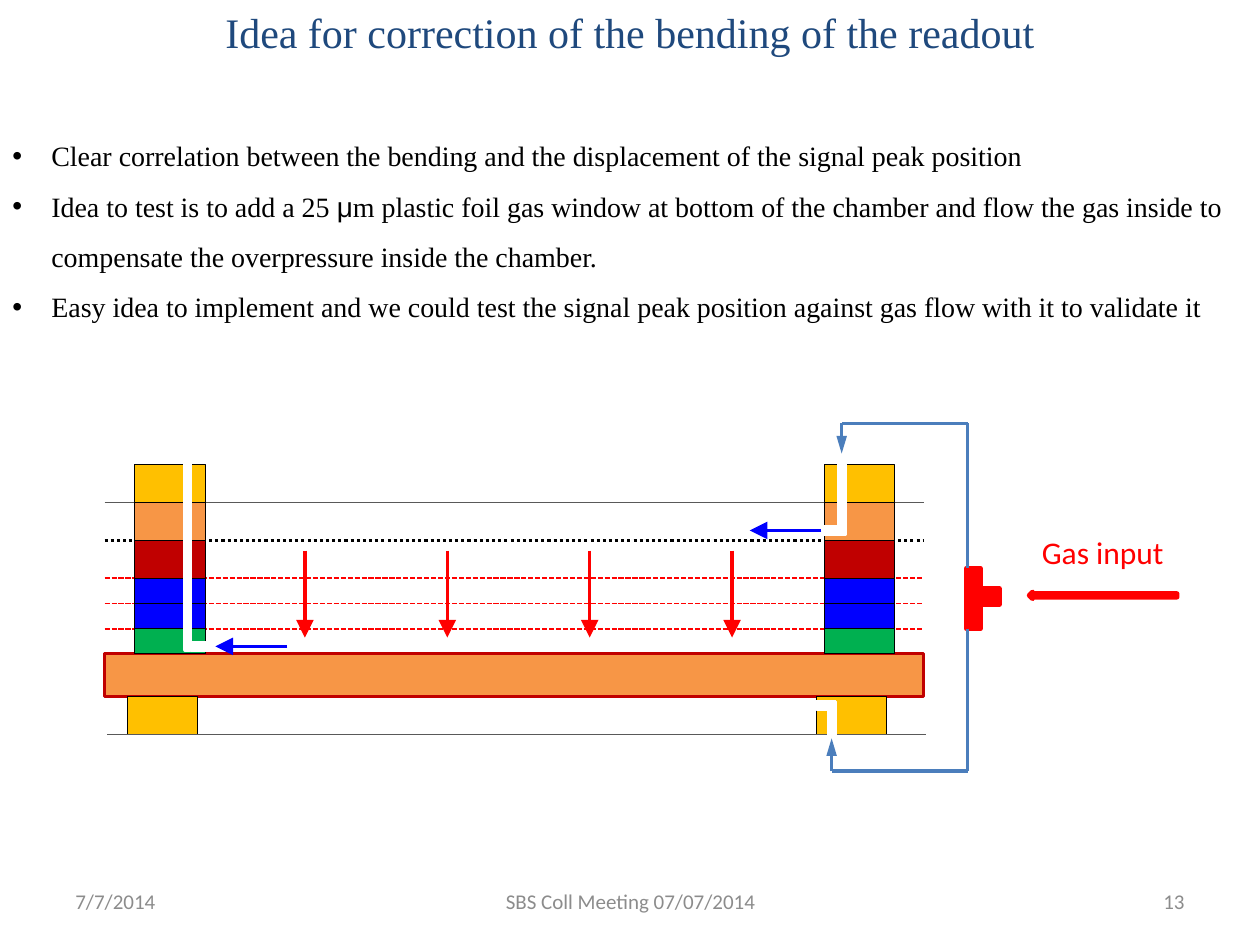
from dataclasses import dataclass

from lxml.etree import SubElement
from pptx import Presentation
from pptx.dml.color import RGBColor
from pptx.enum.dml import MSO_LINE
from pptx.enum.shapes import MSO_CONNECTOR, MSO_SHAPE
from pptx.enum.text import MSO_ANCHOR, PP_ALIGN
from pptx.oxml.ns import qn
from pptx.util import Inches, Pt


@dataclass(frozen=True)
class Theme:
    navy: str = "1F497D"
    black: str = "000000"
    white: str = "FFFFFF"
    gray: str = "8C8C8C"
    dark: str = "595959"
    red: str = "FF0000"
    wine: str = "C00000"
    gold: str = "FFC000"
    orange: str = "F79646"
    blue: str = "0000FF"
    green: str = "00B050"
    steel: str = "4B7EBC"
    serif: str = "Times New Roman"
    sans: str = "Calibri"
    greek: str = "Arial"
    title: int = 24
    body: int = 16
    label: int = 18
    small: int = 12


T = Theme()


def color(code):
    return RGBColor.from_string(code)


def add_text(slide, box, text, size=T.body, font=T.sans, ink=T.black,
             align=PP_ALIGN.LEFT, anchor=MSO_ANCHOR.TOP, wrap=True,
             bullet=False, space=None):
    """Text is a list of paragraphs; a paragraph is a list of (words, font)."""
    frame = slide.shapes.add_textbox(*map(Inches, box)).text_frame
    frame.word_wrap = wrap
    frame.vertical_anchor = anchor
    paras = [[(text, font)]] if isinstance(text, str) else text
    for i, runs in enumerate(paras):
        para = frame.add_paragraph() if i else frame.paragraphs[0]
        para.alignment = align
        if space:
            para.line_spacing = space
        if bullet:
            props = para._p.get_or_add_pPr()
            props.set("marL", str(Inches(0.31)))
            props.set("indent", str(-Inches(0.31)))
            SubElement(props, qn("a:buFont")).set("typeface", T.greek)
            SubElement(props, qn("a:buChar")).set("char", "•")
        for words, face in runs:
            run = para.add_run()
            run.text = words
            run.font.size = Pt(size)
            run.font.name = face
            run.font.color.rgb = color(ink)


def add_block(slide, box, fill, edge=T.black, width=0.5, kind=MSO_SHAPE.RECTANGLE):
    shape = slide.shapes.add_shape(kind, *map(Inches, box))
    shape.shadow.inherit = False
    shape.fill.solid()
    shape.fill.fore_color.rgb = color(fill)
    shape.line.color.rgb = color(edge)
    shape.line.width = Pt(width)
    return shape


def add_line(slide, x1, y1, x2, y2, ink, width=2, dash=None, head=None):
    """Head is the width of the arrowhead: med or lg."""
    line = slide.shapes.add_connector(
        MSO_CONNECTOR.STRAIGHT, *map(Inches, (x1, y1, x2, y2)))
    line.line.color.rgb = color(ink)
    line.line.width = Pt(width)
    if dash:
        line.line.dash_style = dash
    props = line._element.spPr
    if head:
        tail = SubElement(props.find(qn("a:ln")), qn("a:tailEnd"))
        for key, value in (("type", "triangle"), ("w", head), ("len", "lg")):
            tail.set(key, value)
    SubElement(props, qn("a:effectLst"))


def add_duct(slide, *boxes):
    for box in boxes:
        add_block(slide, box, T.white, T.white, 2)


def add_stack(slide, x, y, wide):
    """Frame layers from top to bottom."""
    for high, fill in ((0.3, T.gold), (0.3, T.orange), (0.3, T.wine),
                       (0.2, T.blue), (0.2, T.blue), (0.2, T.green)):
        add_block(slide, (x, y, wide, high), fill)
        y += high


def add_chamber(slide, x, y, wide):
    # Foils
    for drop, ink, width, dash in (
            (0.3, T.dark, 0.75, None),
            (0.6, T.black, 1.75, MSO_LINE.ROUND_DOT),
            (0.9, T.red, 1, MSO_LINE.SQUARE_DOT),
            (1.1, T.red, 1, MSO_LINE.SQUARE_DOT),
            (1.3, T.red, 1, MSO_LINE.SQUARE_DOT)):
        # python-pptx names sysDot ROUND_DOT and sysDash SQUARE_DOT
        add_line(slide, x, y + drop, x + wide, y + drop, ink, width, dash)

    # Readout board and side frames
    base = y + 1.5
    add_block(slide, (x, base, wide, 0.34), T.orange, T.wine, 1.75)
    sides = (x + 0.24, x + 5.71)
    for side in sides:
        add_stack(slide, side, y, 0.56)

    # Gas ducts in the frames
    add_duct(slide, (x + 0.64, y - 0.28, 0.04, 1.75), (x + 0.69, y + 1.41, 0.15, 0.06),
             (x + 5.7, y + 0.49, 0.15, 0.06), (x + 5.83, y - 0.09, 0.05, 0.64))

    # Drift and gas flow
    for i in range(4):
        at = x + 1.59 + 1.13 * i
        add_line(slide, at, y + 0.68, at, y + 1.37, T.red, head="lg")
    for start, drop in ((5.69, 0.52), (1.45, 1.44)):
        add_line(slide, x + start, y + drop, x + start - 0.57, y + drop,
                 T.blue, head="lg")

    # Gas window below the board
    foot = base + 0.34
    for side in sides:
        add_block(slide, (side - 0.06, foot, 0.56, 0.3), T.gold)
    add_line(slide, x + 0.02, foot + 0.3, x + wide + 0.02, foot + 0.3, T.dark, 0.75)
    add_duct(slide, (x + 5.65, foot + 0.04, 0.15, 0.06),
             (x + 5.75, foot + 0.04, 0.05, 0.64))


def add_supply(slide, x, y):
    # Tee piece
    for box in ((x + 0.1, y + 0.16, 0.15, 0.13), (x - 0.01, y, 0.11, 0.48)):
        add_block(slide, box, T.red, T.red, 3)

    # Pipes to the chamber top and to the gas window
    for start, end, left, tip in ((y, y - 1.15, x - 1, y - 0.91),
                                  (y + 0.48, y + 1.61, x - 1.08, y + 1.35)):
        add_line(slide, x, start, x, end, T.steel)
        add_line(slide, x, end, left, end, T.steel)
        add_line(slide, left, end, left, tip, T.steel, head="med")

    # Inlet
    inlet = add_block(slide, (x + 0.49, y + 0.19, 1.17, 0.05), T.red, T.red, 3,
                      MSO_SHAPE.RIGHT_ARROW)
    inlet.rotation = 180
    add_text(slide, (x + 0.49, y - 0.33, 1.18, 0.4), "Gas input",
             size=T.label, ink=T.red, wrap=False)


def add_head(slide, x, y, wide):
    add_text(slide, (x, y, wide, 0.5),
             "Idea for correction of the bending of the readout",
             size=T.title, font=T.serif, ink=T.navy, align=PP_ALIGN.CENTER)
    points = [
        [("Clear correlation between the bending and the displacement of the "
          "signal peak position", T.serif)],
        [("Idea to test is to add a 25 ", T.serif), ("μ", T.greek),
         ("m plastic foil gas window at bottom of the chamber and flow the gas "
          "inside to compensate the overpressure inside the chamber.", T.serif)],
        [("Easy idea to implement and we could test the signal peak position "
          "against gas flow with it to validate it", T.serif)],
    ]
    add_text(slide, (x, y + 0.92, wide, 1.72), points, bullet=True, space=1.5)


def add_foot(slide, x, y):
    for left, wide, text, align in (
            (0, 2.33, "7/7/2014", PP_ALIGN.LEFT),
            (2.92, 3.17, "SBS Coll Meeting 07/07/2014", PP_ALIGN.CENTER),
            (6.67, 2.33, "13", PP_ALIGN.RIGHT)):
        add_text(slide, (x + left, y, wide, 0.4), text, size=T.small,
                 ink=T.gray, align=align, anchor=MSO_ANCHOR.MIDDLE)


def main():
    deck = Presentation()
    deck.slide_width, deck.slide_height = Inches(10), Inches(7.5)
    slide = deck.slides.add_slide(deck.slide_layouts[6])
    add_foot(slide, 0.5, 6.95)
    add_head(slide, 0, 0, 10)
    add_chamber(slide, 0.83, 3.69, 6.5)
    add_supply(slide, 7.68, 4.51)
    deck.save("out.pptx")


if __name__ == "__main__":
    main()
